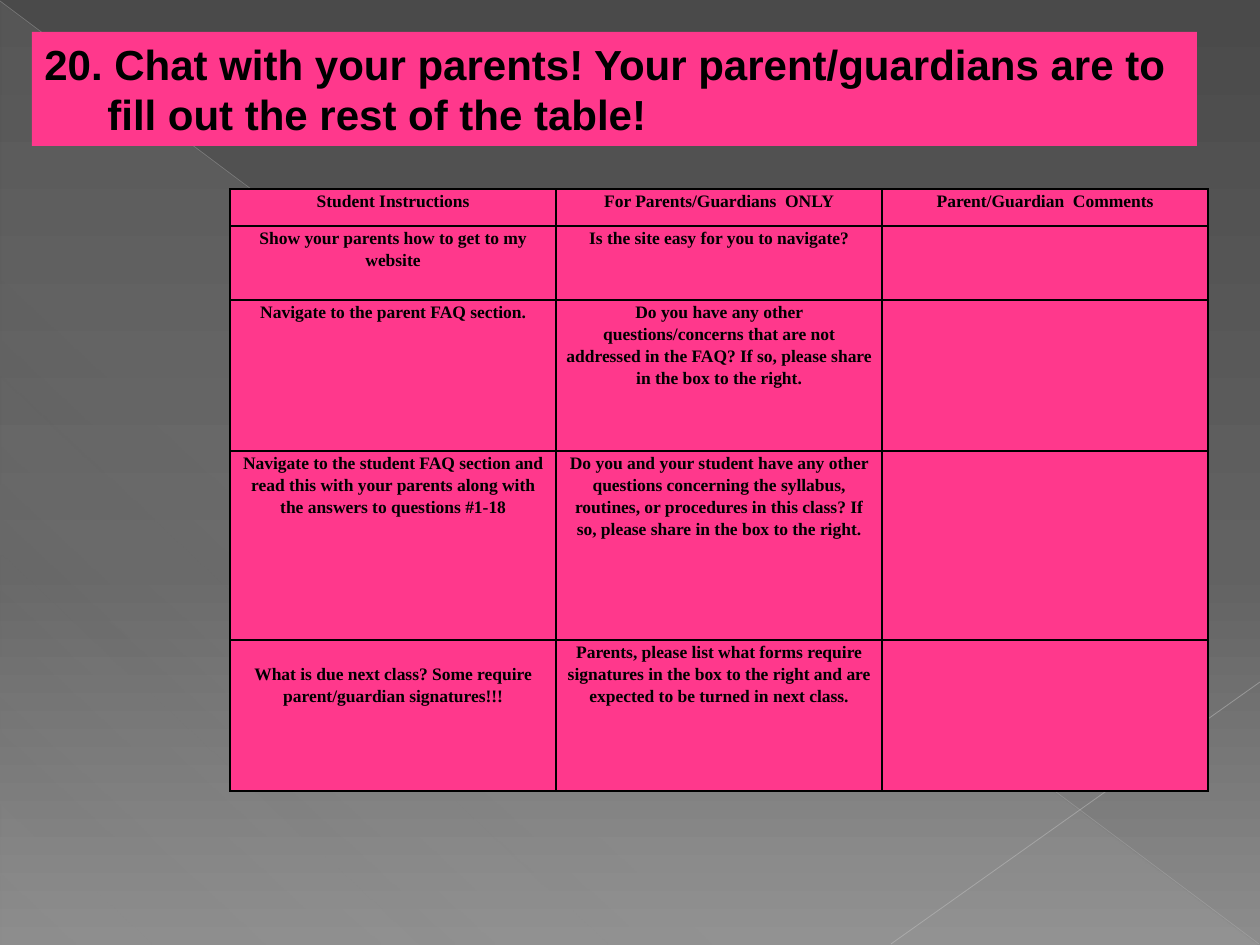
import pptx
import pptx.util
import pptx.dml.color
import pptx.enum.text
import pptx.enum.shapes
import pptx.oxml
import pptx.oxml.ns

TITLE = "20. Chat with your parents! Your parent/guardians are to fill out the rest of the table!"
ROWS = [
    (37, 0, "Student Instructions", "For Parents/Guardians  ONLY", "Parent/Guardian  Comments"),
    (74, 0, "Show your parents how to get to my website",
     "Is the site easy for you to navigate?", ""),
    (151, 0, "Navigate to the parent FAQ section.",
     "Do you have any other questions/concerns that are not addressed in the FAQ? "
     "If so, please share in the box to the right.", ""),
    (189, 0, "Navigate to the student FAQ section and read this with your parents "
     "along with the answers to questions #1-18",
     "Do you and your student have any other questions concerning the syllabus, routines, "
     "or procedures in this class? If so, please share in the box to the right.", ""),
    (151, 22, "What is due next class? Some require parent/guardian signatures!!!",
     "Parents, please list what forms require signatures in the box to the right "
     "and are expected to be turned in next class.", ""),
]
LINES = [((0, 1, 1259, 944), "BFBFBF", 0.39, 35), ((1260, 682, 891, 944), "C6C6C6", 0.47, 45)]
THEME = {
    "pink": "FF388C", "ink": "000000", "rule": 1,
    "title": {"name": "Arial", "size": pptx.util.Pt(24), "bold": True},
    "cell": {"name": "Times New Roman", "size": pptx.util.Pt(10), "bold": True},
    "back": (90, [(0, "4A4A4A", 100), (60, "626262", 100), (100, "8C8C8C", 100)]),
    "sheen": (133, [(0, "D2D2D2", 10), (70, "D2D2D2", 8), (100, "D2D2D2", 1)]),
}
LEFT, TOP, COL, PAD = 230, 189, 326, 9
NS = pptx.oxml.ns.nsdecls("a")


def px(*nums):
    return [pptx.util.Emu(round(n * 914400 / 126)) for n in nums]


def rgb(code):
    return pptx.dml.color.RGBColor.from_string(code)


def put(obj, vals):
    for key, val in vals.items():
        setattr(obj, key, val)


def paint(fill, code):
    fill.solid()
    fill.fore_color.rgb = rgb(code)


def tint(code, alpha):
    return f'<a:srgbClr val="{code}"><a:alpha val="{alpha * 1000}"/></a:srgbClr>'


def blend(host, look):
    angle, stops = look
    body = "".join(f'<a:gs pos="{pos * 1000}">{tint(code, alpha)}</a:gs>'
                   for pos, code, alpha in stops)
    old = host.find(pptx.oxml.ns.qn("a:solidFill"))
    host.replace(old, pptx.oxml.parse_xml(
        f'<a:gradFill {NS} rotWithShape="1"><a:gsLst>{body}</a:gsLst>'
        f'<a:lin ang="{angle * 60000}" scaled="0"/></a:gradFill>'))


def write(para, text, look):
    run = para.add_run()
    run.text = text
    put(run.font, look)
    run.font.color.rgb = rgb(THEME["ink"])


def edge(cell):
    props = cell._tc.get_or_add_tcPr()
    for spot, side in enumerate("LRTB"):
        props.insert(spot, pptx.oxml.parse_xml(
            f'<a:ln{side} {NS} w="{THEME["rule"] * 12700}"><a:solidFill>'
            f'{tint(THEME["ink"], 100)}</a:solidFill></a:ln{side}>'))


def scene(slide):
    slide.background.fill.solid()
    blend(slide.element.xpath(".//p:bgPr")[0], THEME["back"])
    kind = pptx.enum.shapes.MSO_SHAPE.RIGHT_TRIANGLE
    sheen = slide.shapes.add_shape(kind, *px(1, 2, 1257, 942))
    sheen.shadow.inherit = False
    sheen.line.fill.background()
    sheen.fill.solid()
    blend(sheen.element.spPr, THEME["sheen"])
    for ends, code, width, alpha in LINES:
        line = slide.shapes.add_connector(pptx.enum.shapes.MSO_CONNECTOR.STRAIGHT, *px(*ends))
        line.line.width = pptx.util.Pt(width)
        paint(line.line.fill, code)
        props = line.element.spPr
        hue = props.xpath(".//a:srgbClr")[0]
        hue.getparent().replace(hue, pptx.oxml.parse_xml(
            tint(code, alpha).replace("<a:srgbClr", f"<a:srgbClr {NS}", 1)))
        props.append(pptx.oxml.parse_xml(f"<a:effectLst {NS}/>"))


def grid(slide):
    wide = len(ROWS[0]) - 2
    tall = sum(row[0] for row in ROWS)
    frame = slide.shapes.add_table(len(ROWS), wide, *px(LEFT, TOP, COL * wide, tall))
    table = frame.table
    put(table, {"first_row": False, "horz_banding": False})
    for col in table.columns:
        col.width = px(COL)[0]
    for r, (high, drop, *texts) in enumerate(ROWS):
        table.rows[r].height = px(high)[0]
        for c, text in enumerate(texts):
            cell = table.cell(r, c)
            side, none, top = px(PAD, 0, drop if c == 0 else 0)
            put(cell, {"margin_left": side, "margin_right": side,
                       "margin_top": top, "margin_bottom": none})
            paint(cell.fill, THEME["pink"])
            edge(cell)
            para = cell.text_frame.paragraphs[0]
            put(para, {"alignment": pptx.enum.text.PP_ALIGN.CENTER, "line_spacing": 1.15})
            if text:
                write(para, text, THEME["cell"])


def banner(slide):
    box = slide.shapes.add_textbox(*px(32, 32, 1165, 114))
    paint(box.fill, THEME["pink"])
    put(box.text_frame, {"word_wrap": True,
                         "vertical_anchor": pptx.enum.text.MSO_ANCHOR.MIDDLE,
                         "auto_size": pptx.enum.text.MSO_AUTO_SIZE.SHAPE_TO_FIT_TEXT})
    para = box.text_frame.paragraphs[0]
    hang = px(63)[0]
    props = para._p.get_or_add_pPr()
    props.set("marL", str(hang))
    props.set("indent", str(-hang))
    write(para, TITLE, THEME["title"])


def main():
    deck = pptx.Presentation()
    deck.slide_width, deck.slide_height = px(1260, 945)
    slide = deck.slides.add_slide(deck.slide_layouts[6])
    scene(slide)
    grid(slide)
    banner(slide)
    deck.save("out.pptx")


if __name__ == "__main__":
    main()
